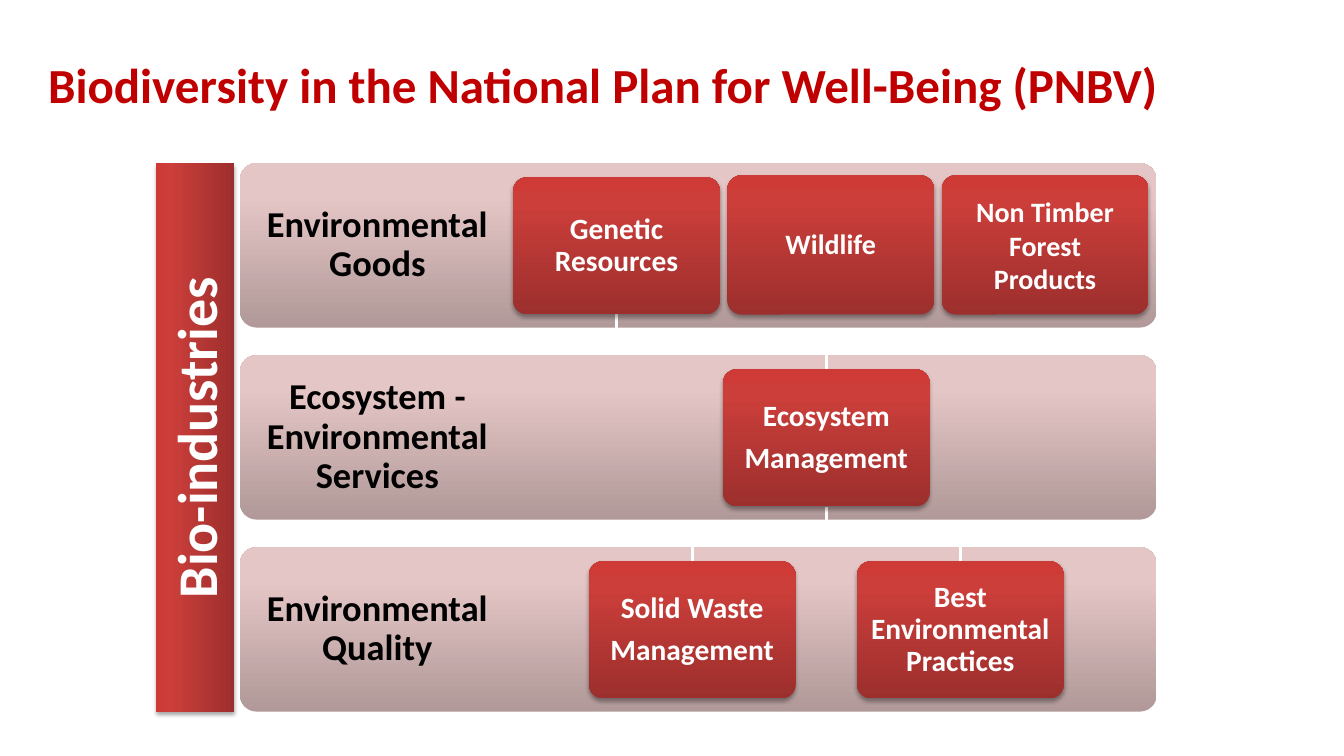
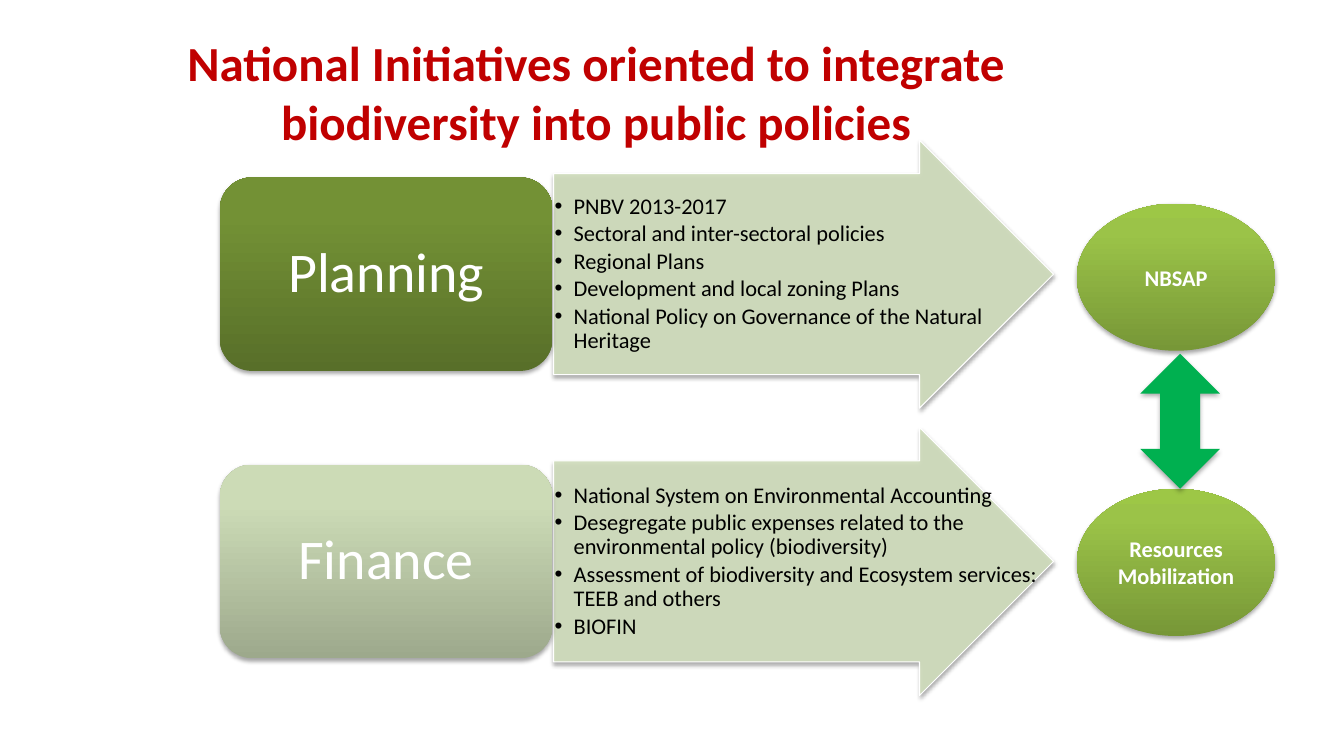
from copy import deepcopy
from dataclasses import dataclass

from lxml.etree import SubElement
from pptx import Presentation
from pptx.dml.color import RGBColor
from pptx.enum.shapes import MSO_SHAPE as Shp
from pptx.enum.text import MSO_ANCHOR as Anchor, PP_ALIGN as Align
from pptx.oxml.ns import qn
from pptx.util import Inches, Pt

W, H = 13.33, 7.5
FONT = "Calibri"
COLORS = {"title": "C00000", "black": "000000", "white": "FFFFFF",
          "arrow": "D0DDBC", "link": "00B050"}
# Gradient stops run from the bottom edge to the top edge
STOPS = (0, 0.8, 1)
GRADIENTS = {
    "pink": ("B09998", "E5C6C6", "E6C7C6"),
    "red": ("9C2F2D", "CB3E3A", "CE3B37"),
    "olive": ("586F29", "739135", "749334"),
    "pale": ("9DA98C", "CCDBB6", "CDDDB6"),
    "lime": ("779737", "9BC348", "9DC746"),
}


@dataclass(frozen=True)
class Box:
    left: float
    top: float
    width: float
    height: float

    def emu(self) -> tuple:
        return tuple(Inches(v) for v in (self.left, self.top, self.width, self.height))


@dataclass(frozen=True)
class Style:
    size: float
    color: str = "white"
    bold: bool = True
    line: float = 1.0
    after: float = 0.0  # space after, as a share of the font size
    inset: tuple = (0.1, 0.05)
    align: Align = Align.CENTER
    bullet: float = 0.0  # hanging indent


@dataclass(frozen=True)
class Band:
    label: str
    first_left: float
    pitch: float


@dataclass(frozen=True)
class Card:
    row: int
    col: int
    lines: tuple
    style: Style
    lift: float = 0.0

    def box(self) -> Box:
        band = BANDS[self.row]
        return Box(band.first_left + self.col * band.pitch,
                   band_top(self.row) + 0.14 - self.lift, CARD_W, CARD_H + self.lift)


@dataclass(frozen=True)
class Initiative:
    name: str
    gradient: str
    outcome: str
    points: tuple


TITLE = Style(35, "title")
BAR = Style(40)
LABEL = Style(26, "black", line=0.9, after=0.35, inset=(0.2, 0.2))
CARD = Style(21, line=0.9, after=0.35, inset=(0.05, 0.05))
SIDE_CARD = Style(20, line=0.9, after=0.35, inset=(0.1, 0.1))
LOOSE_CARD = Style(20, inset=(0.1, 0.1))
TOPIC = Style(40, bold=False, line=0.9, after=0.35, inset=(0.08, 0))
POINTS = Style(16, "black", False, 0.9, 0.15, (0.01, 0.01), Align.LEFT, 0.19)
OUTCOME = Style(16)

# Slide 1 grid: three bands, each with its own card columns
BAND_LEFT, BAND_TOP, BAND_W, BAND_H, BAND_PITCH = 2.38, 1.62, 9.09, 1.63, 1.905
CARD_W, CARD_H = 2.05, 1.36
BANDS = (
    Band("Environmental Goods", 5.09, 2.125),
    Band("Ecosystem - Environmental Services", 5.84, 1.33),
    Band("Environmental Quality", 5.84, 1.33),
)
GENETIC = Card(0, 0, ("Genetic Resources",), CARD)
ECOSYSTEM = Card(1, 1, ("Ecosystem", "Management"), CARD)
WASTE = Card(2, 0, ("Solid Waste", "Management"), CARD)
PRACTICES = Card(2, 2, ("Best Environmental Practices",), CARD)
CARDS = (
    GENETIC, ECOSYSTEM, WASTE, PRACTICES,
    Card(0, 1, ("Wildlife",), SIDE_CARD, 0.02),
    Card(0, 2, ("Non Timber", "Forest Products"), LOOSE_CARD, 0.02),
)
LINKS = ((GENETIC, ECOSYSTEM), (ECOSYSTEM, WASTE), (ECOSYSTEM, PRACTICES))

# Slide 2 grid: two rows
ROW_TOP, ROW_PITCH, OVAL_PITCH = 1.39, 2.85, 2.83
INITIATIVES = (
    Initiative("Planning", "olive", "NBSAP", (
        "PNBV 2013-2017",
        "Sectoral and inter-sectoral policies",
        "Regional Plans",
        "Development and local zoning Plans",
        "National Policy on Governance of the Natural Heritage")),
    Initiative("Finance", "pale", "Resources Mobilization", (
        "National System on Environmental Accounting",
        "Desegregate public expenses related to the environmental policy (biodiversity)",
        "Assessment of biodiversity and Ecosystem services: TEEB and others",
        "BIOFIN")),
)


def band_top(row: int) -> float:
    return BAND_TOP + row * BAND_PITCH


def rgb(name: str) -> RGBColor:
    return RGBColor.from_string(COLORS[name])


def write(sp, lines: tuple, style: Style) -> None:
    """Fill a shape or text box with styled paragraphs."""
    tf = sp.text_frame
    tf.word_wrap = True
    tf.vertical_anchor = Anchor.MIDDLE
    tf.margin_left = tf.margin_right = Inches(style.inset[0])
    tf.margin_top = tf.margin_bottom = Inches(style.inset[1])
    tf.text = "\n".join(lines)
    for p in tf.paragraphs:
        if style.bullet:
            pPr = p._p.get_or_add_pPr()
            pPr.set("marL", str(Inches(style.bullet)))
            pPr.set("indent", str(-Inches(style.bullet)))
            SubElement(pPr, qn("a:buFont")).set("typeface", "Arial")
            SubElement(pPr, qn("a:buChar")).set("char", "•")
        p.alignment = style.align
        p.line_spacing = style.line
        p.space_after = Pt(style.after * style.size)
        for r in p.runs:
            r.font.name, r.font.size, r.font.bold = FONT, Pt(style.size), style.bold
            r.font.color.rgb = rgb(style.color)


def add_text(slide, box: Box, lines: tuple, style: Style) -> None:
    write(slide.shapes.add_textbox(*box.emu()), lines, style)


def add_shadow(sp, alpha: int = 35, blur: float = 3.1, dist: float = 1.8) -> None:
    effects = sp._element.spPr.find(qn("a:effectLst"))
    shadow = SubElement(effects, qn("a:outerShdw"), blurRad=str(Pt(blur)),
                        dist=str(Pt(dist)), dir="5400000", rotWithShape="0")
    color = SubElement(shadow, qn("a:srgbClr"), val=COLORS["black"])
    SubElement(color, qn("a:alpha"), val=str(alpha * 1000))


def add_shape(slide, kind: Shp, box: Box, adjust: tuple = ()):
    sp = slide.shapes.add_shape(kind, *box.emu())
    for i, value in enumerate(adjust):
        sp.adjustments[i] = value
    sp.shadow.inherit = False
    sp.line.fill.background()
    return sp


def add_gradient_shape(slide, kind: Shp, box: Box, gradient: str,
                       adjust: tuple = (), shadow: bool = True):
    sp = add_shape(slide, kind, box, adjust)
    sp.fill.gradient()
    sp.fill.gradient_angle = 90
    stop_list = sp._element.spPr.find(qn("a:gradFill")).find(qn("a:gsLst"))
    stop_list.append(deepcopy(stop_list[0]))
    for stop, position, color in zip(sp.fill.gradient_stops, STOPS, GRADIENTS[gradient]):
        stop.position = position
        stop.color.rgb = RGBColor.from_string(color)
    if shadow:
        add_shadow(sp)
    return sp


def add_link(slide, start: Card, end: Card) -> None:
    """Stepped line from the bottom of one card to the top of another."""
    a, b = start.box(), end.box()
    x1, y1 = a.left + a.width / 2, a.top + a.height
    x2, y2 = b.left + b.width / 2, b.top
    mid = (y1 + y2) / 2
    outline = slide.shapes.build_freeform(Inches(x1), Inches(y1))
    outline.add_line_segments(
        [(Inches(x), Inches(y)) for x, y in ((x1, mid), (x2, mid), (x2, y2))], close=False)
    sp = outline.convert_to_shape()
    sp.shadow.inherit = False
    sp.fill.background()
    sp.line.color.rgb = rgb("white")
    sp.line.width = Pt(2)


def add_slide(prs):
    return prs.slides.add_slide(prs.slide_layouts[6])


def add_title(slide, box: Box, text: str) -> None:
    add_text(slide, box, (text,), TITLE)


def build_plan(prs) -> None:
    s = add_slide(prs)
    # Bands with their labels
    for row, band in enumerate(BANDS):
        top = band_top(row)
        add_gradient_shape(s, Shp.ROUNDED_RECTANGLE, Box(BAND_LEFT, top, BAND_W, BAND_H),
                           "pink", (0.1,), shadow=False)
        add_text(s, Box(BAND_LEFT, top, 0.3 * BAND_W, BAND_H), (band.label,), LABEL)
    # Links and cards
    for start, end in LINKS:
        add_link(s, start, end)
    for card in CARDS:
        sp = add_gradient_shape(s, Shp.ROUNDED_RECTANGLE, card.box(), "red", (0.1,))
        write(sp, card.lines, card.style)
    # Upright bar beside the bands
    length, thick = 2 * BAND_PITCH + BAND_H, 0.77
    bar = add_gradient_shape(
        s, Shp.RECTANGLE,
        Box(1.935 - length / 2, BAND_TOP + (length - thick) / 2, length, thick), "red")
    bar.rotation = 270
    write(bar, ("Bio-industries",), BAR)
    add_title(s, Box(0.29, 0.36, 11.39, 0.94),
              "Biodiversity in the National Plan for Well-Being (PNBV)")


def build_initiatives(prs) -> None:
    s = add_slide(prs)
    for row, item in enumerate(INITIATIVES):
        top = ROW_TOP + row * ROW_PITCH
        # Arrow with bullet points
        box = Box(5.49, top, 4.96, 2.66)
        arrow = add_shape(s, Shp.RIGHT_ARROW, box, (0.75, 0.5))
        arrow.fill.solid()
        arrow.fill.fore_color.rgb = rgb("arrow")
        color = arrow._element.spPr.find(qn("a:solidFill"))[0]
        SubElement(color, qn("a:alpha"), val="90000")
        arrow.line.color.rgb = rgb("white")
        arrow.line.width = Pt(0.75)
        add_shadow(arrow)
        add_text(s, box, item.points, POINTS)
        # Topic and outcome
        topic = add_gradient_shape(s, Shp.ROUNDED_RECTANGLE, Box(2.18, top + 0.37, 3.3, 1.92),
                                   item.gradient)
        write(topic, (item.name,), TOPIC)
        oval = add_gradient_shape(s, Shp.OVAL, Box(10.68, 2.02 + row * OVAL_PITCH, 1.97, 1.46),
                                  "lime")
        write(oval, (item.outcome,), OUTCOME)
    add_title(s, Box(0.52, 0.44, 10.79, 0.94),
              "National Initiatives oriented to integrate biodiversity into public policies")
    # Two-way arrow between the outcomes
    link = add_shape(s, Shp.UP_DOWN_ARROW, Box(11.31, 3.51, 0.79, 1.34))
    link.fill.solid()
    link.fill.fore_color.rgb = rgb("link")
    add_shadow(link, 32, 3.5, 2.2)


def main() -> None:
    prs = Presentation()
    prs.slide_width, prs.slide_height = Inches(W), Inches(H)
    build_plan(prs)
    build_initiatives(prs)
    prs.save("out.pptx")


if __name__ == "__main__":
    main()
